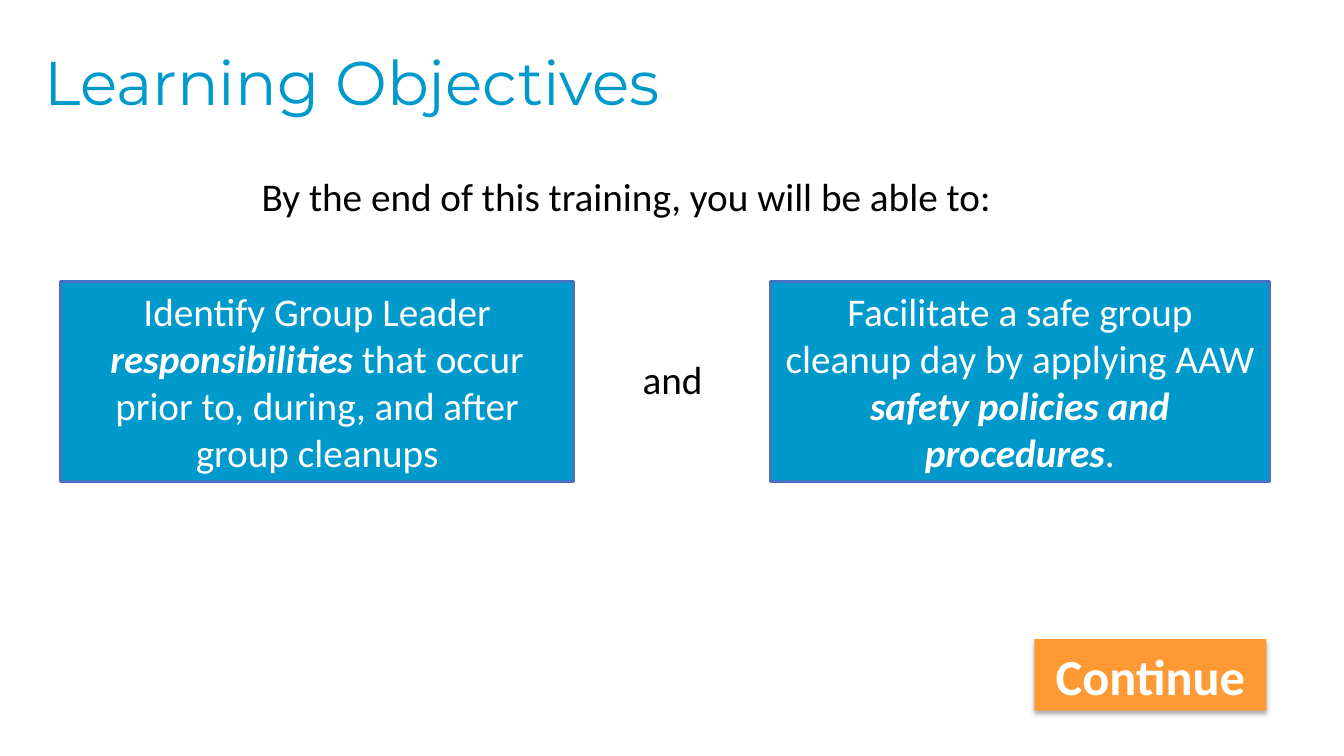
from dataclasses import dataclass

import lxml.etree
import pptx
import pptx.dml.color
import pptx.enum.shapes
import pptx.enum.text
import pptx.oxml.ns
import pptx.shapes.autoshape
import pptx.shapes.base
import pptx.text.text
import pptx.util

RGBColor = pptx.dml.color.RGBColor
Align = pptx.enum.text.PP_ALIGN
Anchor = pptx.enum.text.MSO_ANCHOR

EMU_PER_PX = 9144
BLUE = RGBColor(0x00, 0x99, 0xCC)
OUTLINE = RGBColor(0x44, 0x72, 0xC4)
ORANGE = RGBColor(0xFF, 0x99, 0x33)
WHITE = RGBColor(0xFF, 0xFF, 0xFF)
BLACK = RGBColor(0x00, 0x00, 0x00)


@dataclass(frozen=True)
class Box:
    left: int
    top: int
    width: int
    height: int


@dataclass(frozen=True)
class Style:
    size: int
    color: RGBColor
    font: str = "Calibri"
    bold: bool = False
    align: Align = Align.CENTER
    anchor: Anchor = Anchor.MIDDLE
    line_spacing: float = 1.0


@dataclass(frozen=True)
class Label:
    box: Box
    text: str
    style: Style


@dataclass(frozen=True)
class Objective:
    box: Box
    before: str
    emphasis: str
    after: str


TITLE = Label(
    Box(34, 37, 1150, 96),
    "Learning Objectives",
    Style(44, BLUE, "Montserrat", align=Align.LEFT, line_spacing=0.9),
)
LABELS = [
    Label(
        Box(46, 171, 1150, 82),
        "By the end of this training, you will be able to:",
        Style(28, BLACK, anchor=Anchor.TOP, line_spacing=0.9),
    ),
    Label(Box(608, 348, 118, 57), "and", Style(28, BLACK, anchor=Anchor.TOP)),
]
OBJECTIVES = [
    Objective(
        Box(60, 279, 509, 199),
        "Identify Group Leader ",
        "responsibilities",
        " that occur prior to, during, and after group cleanups",
    ),
    Objective(
        Box(764, 279, 495, 199),
        "Facilitate a safe group cleanup day by applying AAW ",
        "safety policies and procedures",
        ".",
    ),
]
OBJECTIVE_STYLE = Style(28, WHITE)
CONTINUE = Label(Box(1026, 634, 230, 71), "Continue", Style(36, WHITE, bold=True))


def px(length: int) -> pptx.util.Emu:
    return pptx.util.Emu(length * EMU_PER_PX)


def place(shape: pptx.shapes.base.BaseShape, box: Box) -> None:
    shape.left, shape.top = px(box.left), px(box.top)
    shape.width, shape.height = px(box.width), px(box.height)


def format_text(frame: pptx.text.text.TextFrame, style: Style) -> None:
    frame.word_wrap = True
    frame.auto_size = pptx.enum.text.MSO_AUTO_SIZE.NONE
    frame.vertical_anchor = style.anchor
    paragraph = frame.paragraphs[0]
    paragraph.alignment = style.align
    paragraph.line_spacing = style.line_spacing
    paragraph.font.name = style.font
    paragraph.font.size = pptx.util.Pt(style.size)
    paragraph.font.bold = style.bold
    paragraph.font.color.rgb = style.color


def add_label(slide: pptx.slide.Slide, label: Label) -> None:
    text_box = slide.shapes.add_textbox(0, 0, 0, 0)
    place(text_box, label.box)
    text_box.text_frame.text = label.text
    format_text(text_box.text_frame, label.style)


def add_rectangle(
    slide: pptx.slide.Slide, box: Box, fill: RGBColor
) -> pptx.shapes.autoshape.Shape:
    rectangle = slide.shapes.add_shape(
        pptx.enum.shapes.MSO_SHAPE.RECTANGLE, 0, 0, 0, 0
    )
    place(rectangle, box)
    rectangle.shadow.inherit = False
    rectangle.fill.solid()
    rectangle.fill.fore_color.rgb = fill
    return rectangle


def add_objective(slide: pptx.slide.Slide, objective: Objective) -> None:
    rectangle = add_rectangle(slide, objective.box, BLUE)
    rectangle.line.color.rgb = OUTLINE
    rectangle.line.width = pptx.util.Pt(2.25)
    paragraph = rectangle.text_frame.paragraphs[0]
    paragraph.add_run().text = objective.before
    emphasis = paragraph.add_run()
    emphasis.text = objective.emphasis
    emphasis.font.bold = emphasis.font.italic = True
    paragraph.add_run().text = objective.after
    format_text(rectangle.text_frame, OBJECTIVE_STYLE)


def add_drop_shadow(shape: pptx.shapes.autoshape.Shape) -> None:
    qn = pptx.oxml.ns.qn
    effects = shape.element.spPr.find(qn("a:effectLst"))
    shadow = lxml.etree.SubElement(
        effects,
        qn("a:outerShdw"),
        blurRad=str(pptx.util.Pt(3.5)),
        dist=str(pptx.util.Pt(2.2)),
        dir="5400000",
        rotWithShape="0",
    )
    color = lxml.etree.SubElement(shadow, qn("a:srgbClr"), val=str(BLACK))
    lxml.etree.SubElement(color, qn("a:alpha"), val="32000")


def add_button(slide: pptx.slide.Slide, label: Label) -> None:
    button = add_rectangle(slide, label.box, ORANGE)
    button.line.fill.background()
    add_drop_shadow(button)
    button.text_frame.text = label.text
    format_text(button.text_frame, label.style)


def main() -> None:
    presentation = pptx.Presentation()
    presentation.slide_width, presentation.slide_height = px(1333), px(750)
    title_only = presentation.slide_layouts.get_by_name("Title Only")
    slide = presentation.slides.add_slide(title_only)

    title = slide.shapes.title
    place(title, TITLE.box)
    title.text_frame.text = TITLE.text
    format_text(title.text_frame, TITLE.style)

    add_button(slide, CONTINUE)
    for objective in OBJECTIVES:
        add_objective(slide, objective)
    for label in LABELS:
        add_label(slide, label)
    presentation.save("out.pptx")


if __name__ == "__main__":
    main()
